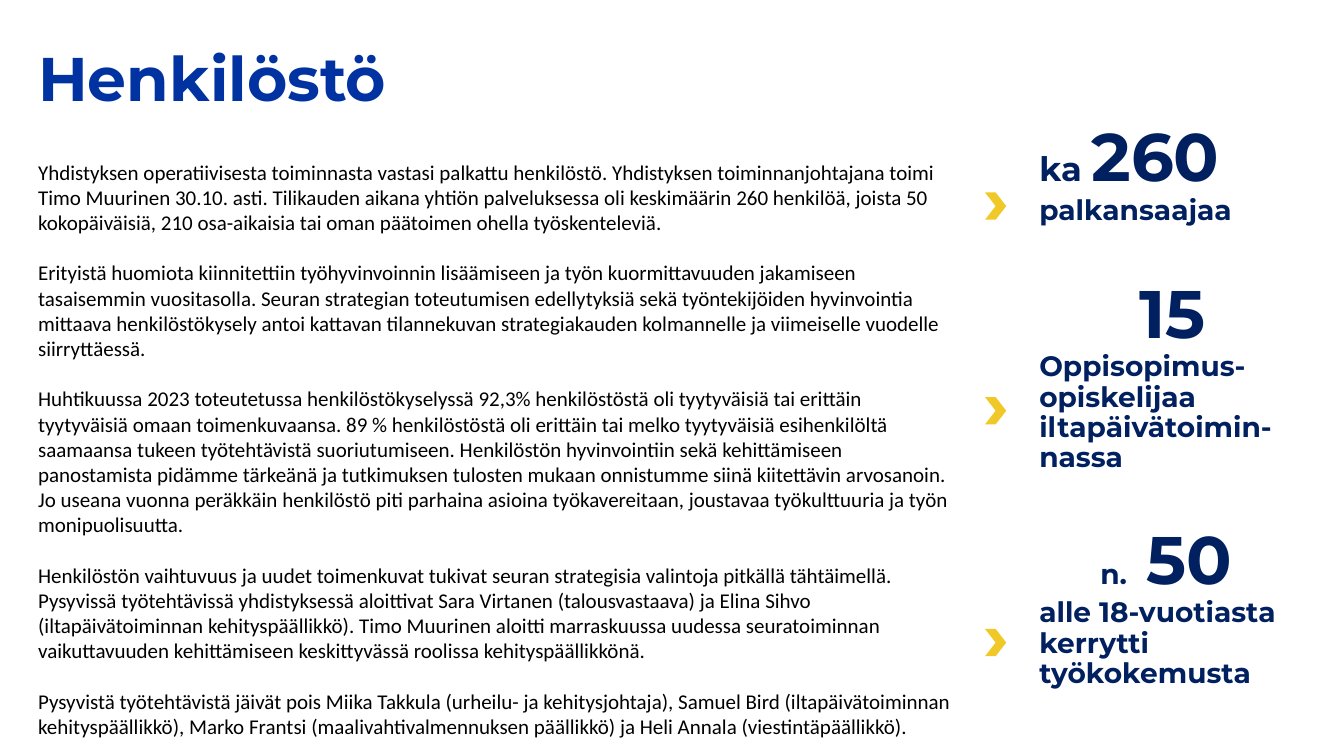
from pptx import Presentation
from pptx.dml.color import RGBColor
from pptx.enum.shapes import MSO_SHAPE
from pptx.enum.text import MSO_ANCHOR, PP_ALIGN
from pptx.util import Inches, Pt

COLORS = {"title": "0033A1", "body": "000000", "stat": "002060", "chevron": "F0C827"}
HEADING_FONT = "Montserrat"
BODY_FONT = "Calibri"
LEFT = 0.28
STAT_LEFT = 10.21

BODY = [
    "Yhdistyksen operatiivisesta toiminnasta vastasi palkattu henkilöstö. "
    "Yhdistyksen toiminnanjohtajana toimi Timo Muurinen 30.10. asti. Tilikauden aikana "
    "yhtiön palveluksessa oli keskimäärin 260 henkilöä, joista 50 kokopäiväisiä, "
    "210 osa-aikaisia tai oman päätoimen ohella työskenteleviä.",
    "Erityistä huomiota kiinnitettiin työhyvinvoinnin lisäämiseen ja työn kuormittavuuden "
    "jakamiseen tasaisemmin vuositasolla. Seuran strategian toteutumisen edellytyksiä sekä "
    "työntekijöiden hyvinvointia mittaava henkilöstökysely antoi kattavan tilannekuvan "
    "strategiakauden kolmannelle ja viimeiselle vuodelle siirryttäessä.",
    "Huhtikuussa 2023 toteutetussa henkilöstökyselyssä 92,3% henkilöstöstä oli tyytyväisiä "
    "tai erittäin tyytyväisiä omaan toimenkuvaansa. 89 % henkilöstöstä oli erittäin tai "
    "melko tyytyväisiä esihenkilöltä saamaansa tukeen työtehtävistä suoriutumiseen. "
    "Henkilöstön hyvinvointiin sekä kehittämiseen panostamista pidämme tärkeänä ja "
    "tutkimuksen tulosten mukaan onnistumme siinä kiitettävin arvosanoin. Jo useana vuonna "
    "peräkkäin henkilöstö piti parhaina asioina työkavereitaan, joustavaa työkulttuuria ja "
    "työn monipuolisuutta.",
    "Henkilöstön vaihtuvuus ja uudet toimenkuvat tukivat seuran strategisia valintoja "
    "pitkällä tähtäimellä. Pysyvissä työtehtävissä yhdistyksessä aloittivat Sara Virtanen "
    "(talousvastaava) ja Elina Sihvo (iltapäivätoiminnan kehityspäällikkö). Timo Muurinen "
    "aloitti marraskuussa uudessa seuratoiminnan vaikuttavuuden kehittämiseen keskittyvässä "
    "roolissa kehityspäällikkönä.",
    "Pysyvistä työtehtävistä jäivät pois Miika Takkula (urheilu- ja kehitysjohtaja), "
    "Samuel Bird (iltapäivätoiminnan kehityspäällikkö), Marko Frantsi "
    "(maalivahtivalmennuksen päällikkö) ja Heli Annala (viestintäpäällikkö).",
]

# Top, width, height, alignment, figure runs (text, size), label lines, chevron top
STATS = [
    (1.18, 3.24, 1.14, PP_ALIGN.LEFT, [("ka ", 24), ("260", 48)], ["palkansaajaa"], 1.91),
    (2.73, 2.84, 2.05, PP_ALIGN.CENTER, [("15", 48)],
     ["Oppisopimus-opiskelijaa iltapäivätoimin-nassa"], 3.94),
    (5.17, 2.71, 1.75, PP_ALIGN.CENTER, [("n.", 20), (" 50", 48)],
     ["alle 18-vuotiasta", "kerrytti", "työkokemusta"], 6.24),
]


def add_text(page, left, top, width, height, paragraphs, font, color,
             bold=False, anchor=MSO_ANCHOR.TOP, line_spacing=1.0, gap=0):
    """Each paragraph is an alignment and a list of (text, size) runs."""
    box = page.shapes.add_textbox(Inches(left), Inches(top), Inches(width), Inches(height))
    frame = box.text_frame
    frame.word_wrap = True
    frame.vertical_anchor = anchor
    for index, (alignment, runs) in enumerate(paragraphs):
        para = frame.add_paragraph() if index else frame.paragraphs[0]
        para.alignment = alignment
        para.line_spacing = line_spacing
        para.space_before = Pt(gap if index else 0)
        for text, size in runs:
            span = para.add_run()
            span.text = text
            span.font.name = font
            span.font.size = Pt(size)
            span.font.bold = bold
            span.font.color.rgb = RGBColor.from_string(COLORS[color])


def add_chevron(page, top):
    chevron = page.shapes.add_shape(
        MSO_SHAPE.CHEVRON, Inches(9.77), Inches(top), Inches(0.21), Inches(0.27))
    chevron.shadow.inherit = False
    chevron.fill.solid()
    chevron.fill.fore_color.rgb = RGBColor.from_string(COLORS["chevron"])
    chevron.line.fill.background()


def add_stat(page, top, width, height, alignment, figure, labels, chevron_top):
    paragraphs = [(alignment, figure)]
    paragraphs += [(PP_ALIGN.LEFT, [(label, 20)]) for label in labels]
    add_text(page, STAT_LEFT, top, width, height, paragraphs,
             HEADING_FONT, "stat", bold=True, line_spacing=0.9)
    add_chevron(page, chevron_top)


def main():
    deck = Presentation()
    deck.slide_width, deck.slide_height = Inches(13.33), Inches(7.5)
    page = deck.slides.add_slide(deck.slide_layouts[6])

    # Title
    add_text(page, LEFT, 0.08, 11.88, 1.45, [(PP_ALIGN.LEFT, [("Henkilöstö", 44)])],
             HEADING_FONT, "title", bold=True, anchor=MSO_ANCHOR.MIDDLE, line_spacing=0.9)

    # Body text, one line of space between paragraphs
    add_text(page, LEFT, 1.53, 9.3, 5.4,
             [(PP_ALIGN.LEFT, [(text, 15)]) for text in BODY], BODY_FONT, "body", gap=18)

    # Key figures
    for stat in STATS:
        add_stat(page, *stat)

    deck.save("out.pptx")


if __name__ == "__main__":
    main()
